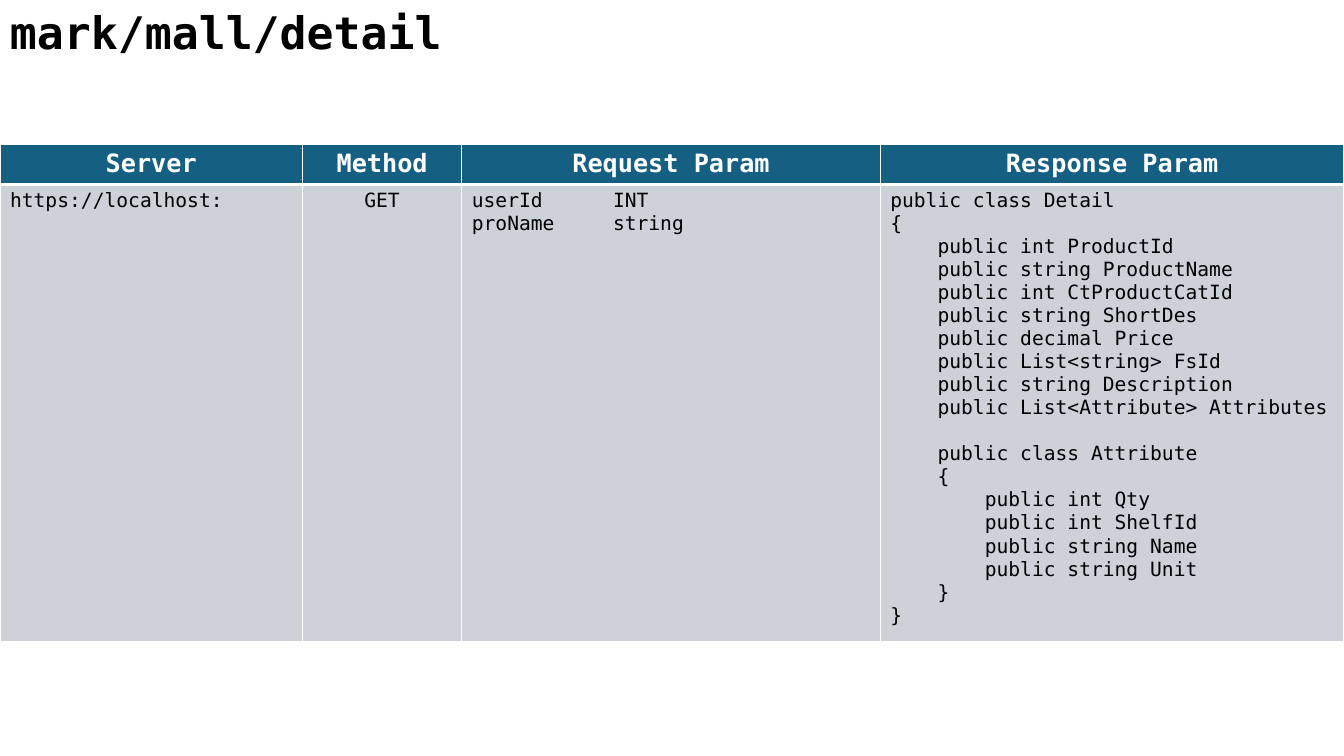
from lxml.etree import SubElement
from pptx import Presentation
from pptx.dml.color import RGBColor
from pptx.enum.text import MSO_AUTO_SIZE, PP_ALIGN
from pptx.oxml.ns import qn
from pptx.util import Inches, Pt

TITLE = "mark/mall/detail"
HEADINGS = ["Server", "Method", "Request Param", "Response Param"]
SERVER = ["https://localhost:"]
METHOD = ["GET"]
REQUEST = ["userId\tINT", "proName\tstring"]
DETAIL_CLASS = [
    "public class Detail",
    "{",
    "    public int ProductId",
    "    public string ProductName",
    "    public int CtProductCatId",
    "    public string ShortDes",
    "    public decimal Price",
    "    public List<string> FsId",
    "    public string Description",
    "    public List<Attribute> Attributes",
]
ATTRIBUTE_CLASS = [
    "    public class Attribute",
    "    {",
    "        public int Qty",
    "        public int ShelfId",
    "        public string Name",
    "        public string Unit",
    "    }",
    "}",
]
ENDPOINT = [SERVER, METHOD, REQUEST, DETAIL_CLASS + ATTRIBUTE_CLASS]

COLUMN_WIDTHS = [3, 1.58, 4.15, 4.6]
ROW_HEIGHTS = [0.4, 4.53]
TABLE_TOP = 1.43
TYPE_TAB = 1.4
CODE_LINE = 16.4
FONT = "DejaVu Sans Mono"
BLACK = RGBColor(0x00, 0x00, 0x00)
WHITE = RGBColor(0xFF, 0xFF, 0xFF)
TEAL = RGBColor(0x15, 0x60, 0x82)
GREY = RGBColor(0xCC, 0xD2, 0xD8)


def write(paragraph, text, size, color, bold=False):
    run = paragraph.add_run()
    run.text = text
    run.font.name = FONT
    run.font.size = Pt(size)
    run.font.bold = bold
    run.font.color.rgb = color


def add_type_tab(paragraph):
    stops = SubElement(paragraph._p.get_or_add_pPr(), qn("a:tabLst"))
    SubElement(stops, qn("a:tab"), pos=str(Inches(TYPE_TAB)), algn="l")


def draw_borders(cell, top, bottom):
    properties = cell._tc.get_or_add_tcPr()
    for side, width in (("L", 1), ("R", 1), ("T", top), ("B", bottom)):
        line = SubElement(properties, qn(f"a:ln{side}"), w=str(Pt(width)))
        fill = SubElement(line, qn("a:solidFill"))
        SubElement(fill, qn("a:srgbClr"), val=str(WHITE))


def fill_cell(cell, lines, size, color, background, bold, centred):
    cell.fill.solid()
    cell.fill.fore_color.rgb = background
    frame = cell.text_frame
    for index, line in enumerate(lines):
        paragraph = frame.add_paragraph() if index else frame.paragraphs[0]
        if "\t" in line:
            add_type_tab(paragraph)
        if line == ATTRIBUTE_CLASS[0]:
            paragraph.space_before = Pt(CODE_LINE)
        paragraph.alignment = PP_ALIGN.CENTER if centred else PP_ALIGN.LEFT
        write(paragraph, line, size, color, bold)


def add_title(slide):
    title = slide.shapes.add_textbox(0, 0, Inches(9.45), Inches(0.64))
    frame = title.text_frame
    frame.word_wrap = True
    frame.auto_size = MSO_AUTO_SIZE.SHAPE_TO_FIT_TEXT
    write(frame.paragraphs[0], TITLE, 32, BLACK, True)


def add_endpoint_table(slide):
    table = slide.shapes.add_table(
        len(ROW_HEIGHTS), len(COLUMN_WIDTHS), 0, Inches(TABLE_TOP),
        Inches(sum(COLUMN_WIDTHS)), Inches(sum(ROW_HEIGHTS))).table
    for row, height in zip(table.rows, ROW_HEIGHTS):
        row.height = Inches(height)
    for index, width in enumerate(COLUMN_WIDTHS):
        table.columns[index].width = Inches(width)
        heading, detail = table.cell(0, index), table.cell(1, index)
        draw_borders(heading, 1, 3)
        draw_borders(detail, 3, 1)
        fill_cell(heading, [HEADINGS[index]], 18, WHITE, TEAL, True, True)
        lines = ENDPOINT[index]
        fill_cell(detail, lines, 14, BLACK, GREY, False, lines is METHOD)


def main():
    """Build the endpoint description slide."""
    deck = Presentation()
    deck.slide_width, deck.slide_height = Inches(13.33), Inches(7.5)
    slide = deck.slides.add_slide(deck.slide_layouts[6])
    add_title(slide)
    add_endpoint_table(slide)
    deck.save("out.pptx")


if __name__ == "__main__":
    main()
